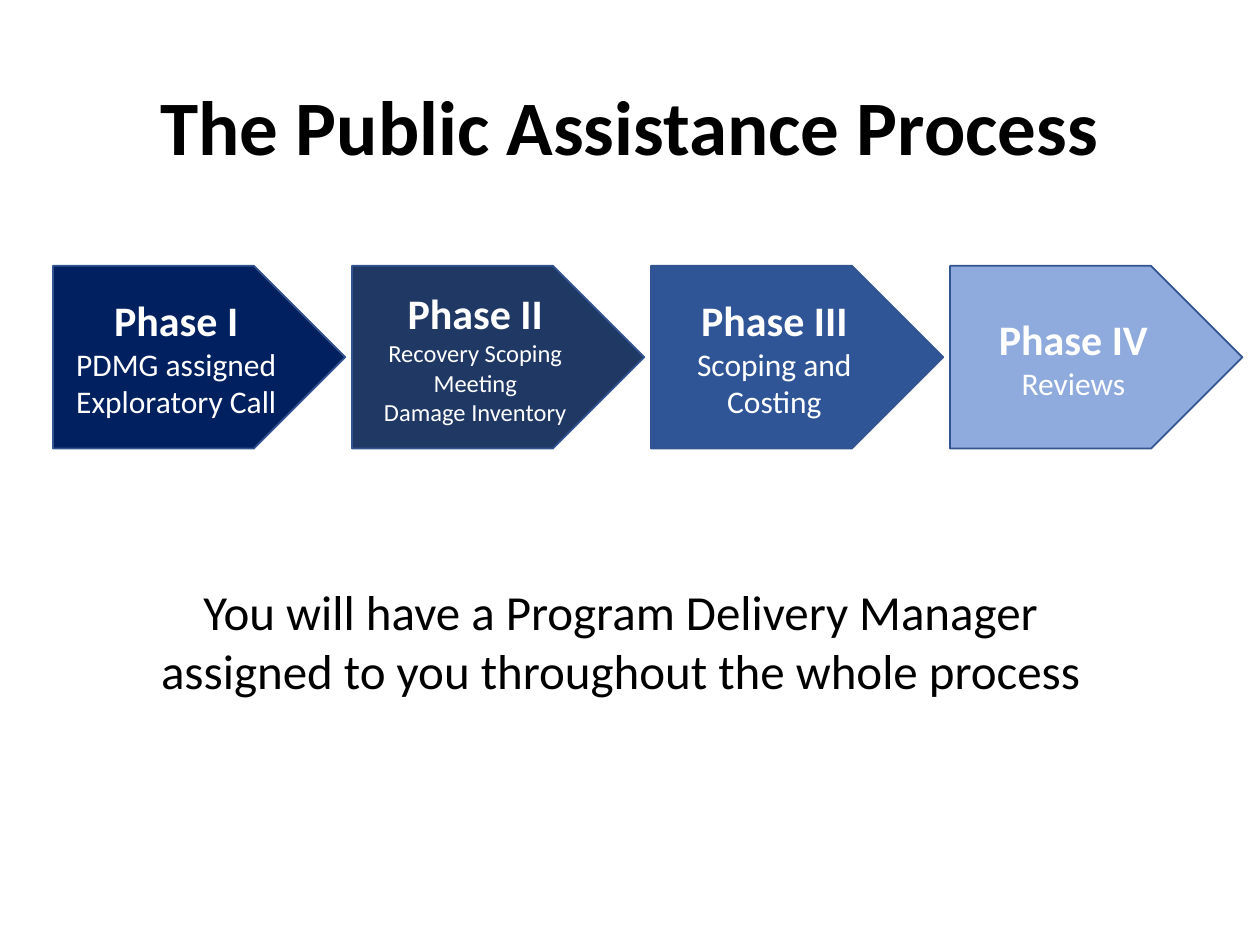
from dataclasses import dataclass

from pptx import Presentation
from pptx.dml.color import RGBColor
from pptx.enum.shapes import MSO_SHAPE
from pptx.enum.text import MSO_ANCHOR, PP_ALIGN
from pptx.util import Inches, Pt

BLACK = RGBColor(0x00, 0x00, 0x00)
WHITE = RGBColor(0xFF, 0xFF, 0xFF)
OUTLINE = RGBColor(0x32, 0x54, 0x91)
NAVY = RGBColor(0x00, 0x20, 0x60)
DARK_BLUE = RGBColor(0x20, 0x38, 0x64)
MID_BLUE = RGBColor(0x2F, 0x55, 0x97)
LIGHT_BLUE = RGBColor(0x8F, 0xAA, 0xDC)

FIRST_LEFT, LAST_LEFT = 0.42, 7.54


@dataclass(frozen=True)
class Phase:
    name: str
    steps: tuple[str, ...]
    fill: RGBColor
    size: int = 18


PHASES = (
    Phase("Phase I", ("PDMG assigned", "Exploratory Call"), NAVY),
    Phase("Phase II", ("Recovery Scoping Meeting", "Damage Inventory"), DARK_BLUE, 14),
    Phase("Phase III", ("Scoping and Costing",), MID_BLUE),
    Phase("Phase IV", ("Reviews",), LIGHT_BLUE),
)


def write(p, text: str, *, size: int, color: RGBColor = BLACK,
          bold: bool = False, spacing: float = 1.0) -> None:
    """Put one centred run of text into a paragraph."""
    p.alignment = PP_ALIGN.CENTER
    p.line_spacing = spacing
    r = p.add_run()
    r.text = text
    r.font.name = "Calibri"
    r.font.size = Pt(size)
    r.font.bold = bold
    r.font.color.rgb = color


def add_text(s, text: str, left: float, top: float, width: float, height: float,
             *, anchor: MSO_ANCHOR = MSO_ANCHOR.TOP, **style) -> None:
    """Add a wrapped text box with a single paragraph."""
    sp = s.shapes.add_textbox(Inches(left), Inches(top), Inches(width), Inches(height))
    tf = sp.text_frame
    tf.word_wrap = True
    tf.vertical_anchor = anchor
    write(tf.paragraphs[0], text, **style)


def add_phase(s, phase: Phase, left: float) -> None:
    """Add one arrow-shaped phase with its name and steps."""
    sp = s.shapes.add_shape(MSO_SHAPE.PENTAGON, Inches(left), Inches(2.11),
                            Inches(2.32), Inches(1.45))
    sp.shadow.inherit = False
    sp.fill.solid()
    sp.fill.fore_color.rgb = phase.fill
    sp.line.color.rgb = OUTLINE
    sp.line.width = Pt(1)
    tf = sp.text_frame
    tf.word_wrap = True
    tf.vertical_anchor = MSO_ANCHOR.MIDDLE
    write(tf.paragraphs[0], phase.name, size=24, color=WHITE, bold=True)
    for step in phase.steps:
        write(tf.add_paragraph(), step, size=phase.size, color=WHITE)


def main() -> None:
    """Build the slide and save it."""
    prs = Presentation()
    prs.slide_width, prs.slide_height = Inches(10), Inches(7.5)
    s = prs.slides.add_slide(prs.slide_layouts[6])
    add_text(s, "The Public Assistance Process", 0.69, 0.31, 8.62, 1.45,
             anchor=MSO_ANCHOR.MIDDLE, size=44, bold=True, spacing=0.9)
    add_text(s, "You will have a Program Delivery Manager assigned to you "
             "throughout the whole process", 1.07, 4.57, 7.71, 1.04, size=28)
    pitch = (LAST_LEFT - FIRST_LEFT) / (len(PHASES) - 1)
    for i, phase in enumerate(PHASES):
        add_phase(s, phase, FIRST_LEFT + i * pitch)
    prs.save("out.pptx")


if __name__ == "__main__":
    main()
